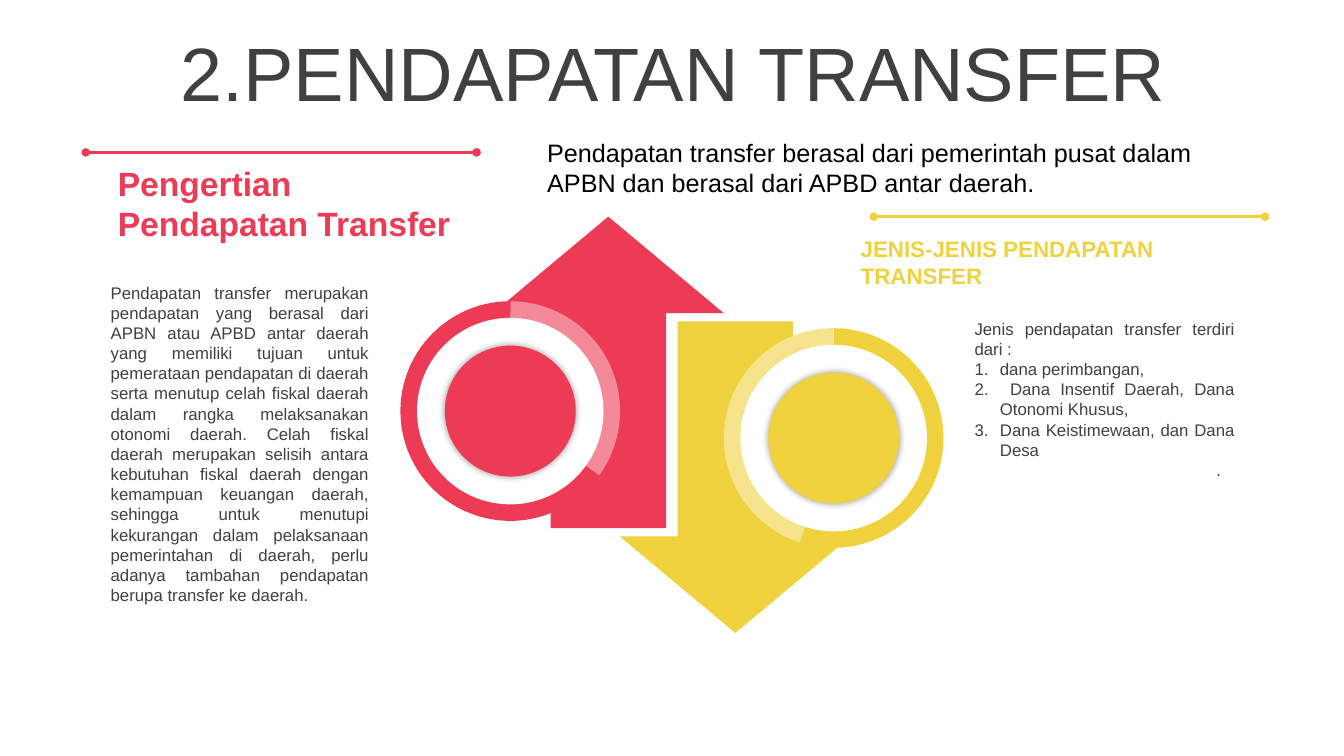
"""Build the slide on transfer revenue with two arrows and two rings."""
from lxml import etree
from pptx import Presentation
from pptx.chart.data import CategoryChartData
from pptx.dml.color import RGBColor
from pptx.enum.chart import XL_CHART_TYPE
from pptx.enum.shapes import MSO_CONNECTOR, MSO_SHAPE
from pptx.enum.text import MSO_ANCHOR, PP_ALIGN
from pptx.oxml import parse_xml
from pptx.oxml.ns import nsdecls, qn
from pptx.util import Cm, Pt

RING = XL_CHART_TYPE.DOUGHNUT
LINE = MSO_CONNECTOR.STRAIGHT
ARROW, OVAL = MSO_SHAPE.UP_ARROW, MSO_SHAPE.OVAL
TOP, MID = MSO_ANCHOR.TOP, MSO_ANCHOR.MIDDLE
LEFT, RIGHT = PP_ALIGN.LEFT, PP_ALIGN.RIGHT
CENTER, JUST = PP_ALIGN.CENTER, PP_ALIGN.JUSTIFY

FONT = "Arial"
HEX = {"red": "ED3B55", "pink": "F48999", "gold": "F0D23F", "cream": "F6E48C",
       "white": "FFFFFF", "gray": "404040", "black": "000000"}

TITLE = "2.PENDAPATAN TRANSFER"
MEANING = (
    "Pendapatan transfer merupakan pendapatan yang berasal dari APBN atau APBD "
    "antar daerah yang memiliki tujuan untuk pemerataan pendapatan di daerah "
    "serta menutup celah fiskal daerah dalam rangka melaksanakan otonomi daerah. "
    "Celah fiskal daerah merupakan selisih antara kebutuhan fiskal daerah dengan "
    "kemampuan keuangan daerah, sehingga untuk menutupi kekurangan dalam "
    "pelaksanaan pemerintahan di daerah, perlu adanya tambahan pendapatan berupa "
    "transfer ke daerah.")
LEAD = ("Pendapatan transfer berasal dari pemerintah pusat dalam APBN "
        "dan berasal dari APBD antar daerah.")
INTRO = "Jenis pendapatan transfer terdiri dari :"
KINDS = ["dana perimbangan,", " Dana Insentif Daerah, Dana Otonomi Khusus,",
         "Dana Keistimewaan, dan Dana Desa"]

# fmt: off
SIDES = [
    {"main": "gold", "arrow": (15.62, 8.1), "turn": 180, "mid": (21.01, 11.04),
     "parts": [(55, "gold"), (45, "cream")], "rule": (22.02, 31.88, 5.46)},
    {"main": "red", "arrow": (12.42, 5.46), "turn": 0, "mid": (12.86, 10.36),
     "parts": [(35, "pink"), (65, "red")], "rule": (2.16, 12.01, 3.84)},
]
# fmt: on
TEXTS = [
    ((21.44, 5.79, 10.92, 1.63), ["JENIS-JENIS PENDAPATAN TRANSFER"],
     16, "gold", True, MID, LEFT),
    ((2.72, 3.96, 8.99, 2.31), ["Pengertian Pendapatan Transfer"],
     24, "red", True, MID, LEFT),
    ((2.54, 6.99, 7.01, 8.46), [MEANING], 12, "gray", False, TOP, JUST),
    ((13.54, 3.33, 17.83, 2.57), [LEAD], 18, "black", False, TOP, LEFT),
    ((24.31, 7.9, 7.06, 4.37), [INTRO, *KINDS, "."],
     12, "gray", False, TOP, JUST),
]
ARROW_W, ARROW_H = 5.82, 7.85
CHART_W, CHART_H, RING_D = 6.35, 6.25, 5.54
DISC_D, BALL_D = 4.7, 3.3


def color(name):
    return RGBColor.from_string(HEX[name])


def paint(shape, name):
    shape.shadow.inherit = False
    shape.fill.solid()
    shape.fill.fore_color.rgb = color(name)
    shape.line.fill.background()


def style(para, size, name, bold, align):
    para.alignment = align
    para.font.name, para.font.size = FONT, Pt(size)
    para.font.bold, para.font.color.rgb = bold, color(name)


def box(mid, wide, high):
    return Cm(mid[0] - wide / 2), Cm(mid[1] - high / 2), Cm(wide), Cm(high)


def add_disc(shapes, mid, size, name):
    disc = shapes.add_shape(OVAL, *box(mid, size, size))
    paint(disc, name)
    return disc


def add_glow(shape):
    glow = etree.SubElement(shape.element.spPr.find(qn("a:effectLst")),
                            qn("a:outerShdw"), blurRad=str(Pt(5)), dist="0",
                            dir="0", algn="ctr", rotWithShape="0")
    tint = etree.SubElement(glow, qn("a:srgbClr"), val=HEX["black"])
    etree.SubElement(tint, qn("a:alpha"), val="40000")


def add_ring(shapes, mid, parts):
    data = CategoryChartData()
    data.categories = [str(i + 1) for i in range(len(parts))]
    data.add_series("Series 1", [val for val, _ in parts])
    chart = shapes.add_chart(RING, *box(mid, CHART_W, CHART_H), data).chart
    chart.has_legend = chart.has_title = False
    chart.font.name, chart.font.size = FONT, Pt(18)
    chart.font.color.rgb = color("black")
    plot = chart.plots[0]
    for i, (_, name) in enumerate(parts):
        form = plot.series[0].points[i].format
        form.fill.solid()
        form.fill.fore_color.rgb = color(name)
        form.line.fill.background()
    area = chart.element.find(".//" + qn("c:plotArea"))
    area.find(".//" + qn("c:holeSize")).set("val", "86")
    for old in area.findall(qn("c:layout")):
        area.remove(old)
    wide, high = RING_D / CHART_W, RING_D / CHART_H
    area.insert(0, parse_xml(
        f'<c:layout {nsdecls("c")}><c:manualLayout><c:layoutTarget val="inner"/>'
        '<c:xMode val="edge"/><c:yMode val="edge"/>'
        f'<c:x val="{(1 - wide) / 2:.3f}"/><c:y val="{(1 - high) / 2:.3f}"/>'
        f'<c:w val="{wide:.3f}"/><c:h val="{high:.3f}"/>'
        '</c:manualLayout></c:layout>'))


def add_side(shapes, side):
    left, top = side["arrow"]
    arrow = shapes.add_shape(ARROW, Cm(left), Cm(top), Cm(ARROW_W), Cm(ARROW_H))
    arrow.adjustments[0], arrow.adjustments[1] = 0.5, 0.418
    arrow.rotation = side["turn"]
    paint(arrow, side["main"])
    add_ring(shapes, side["mid"], side["parts"])
    add_disc(shapes, side["mid"], DISC_D, "white")
    add_glow(add_disc(shapes, side["mid"], BALL_D, side["main"]))


def add_rule(shapes, side):
    start, end, top = side["rule"]
    rule = shapes.add_connector(LINE, Cm(start), Cm(top), Cm(end), Cm(top))
    rule.line.color.rgb, rule.line.width = color(side["main"]), Pt(2)
    pen = rule.line._get_or_add_ln()
    for tag in ("a:headEnd", "a:tailEnd"):
        etree.SubElement(pen, qn(tag), type="oval")
    etree.SubElement(rule.element.spPr, qn("a:effectLst"))


def add_text(shapes, place, lines, size, name, bold, anchor, align):
    frame = shapes.add_textbox(*map(Cm, place)).text_frame
    frame.word_wrap, frame.vertical_anchor = True, anchor
    for i, line in enumerate(lines):
        para = frame.add_paragraph() if i else frame.paragraphs[0]
        para.text = line
        style(para, size, name, bold, RIGHT if line == "." else align)
        props = para._p.get_or_add_pPr()
        if line in KINDS:
            props.set("marL", str(Cm(0.64)))
            props.set("indent", str(-Cm(0.64)))
            etree.SubElement(props, qn("a:buFont"), typeface="+mj-lt")
            etree.SubElement(props, qn("a:buAutoNum"), type="arabicPeriod")
            props.append(props.find(qn("a:defRPr")))
        elif line == ".":
            props.set("marR", str(Cm(0.35)))


def main():
    deck = Presentation()
    deck.slide_width, deck.slide_height = Cm(33.87), Cm(19.05)
    slide = deck.slides.add_slide(deck.slide_layouts[5])
    shapes = slide.shapes
    title = shapes.title
    title.left, title.top, title.width, title.height = map(
        Cm, (0.89, 0.94, 32.16, 2.01))
    title.text_frame.text = TITLE
    title.text_frame.vertical_anchor = MID
    para = title.text_frame.paragraphs[0]
    style(para, 54, "gray", False, CENTER)
    para.line_spacing, para.space_before = 0.9, Pt(10)
    for side in SIDES:
        add_side(shapes, side)
    for side in SIDES:
        add_rule(shapes, side)
    for text in TEXTS:
        add_text(shapes, *text)
    deck.save("out.pptx")


if __name__ == "__main__":
    main()
